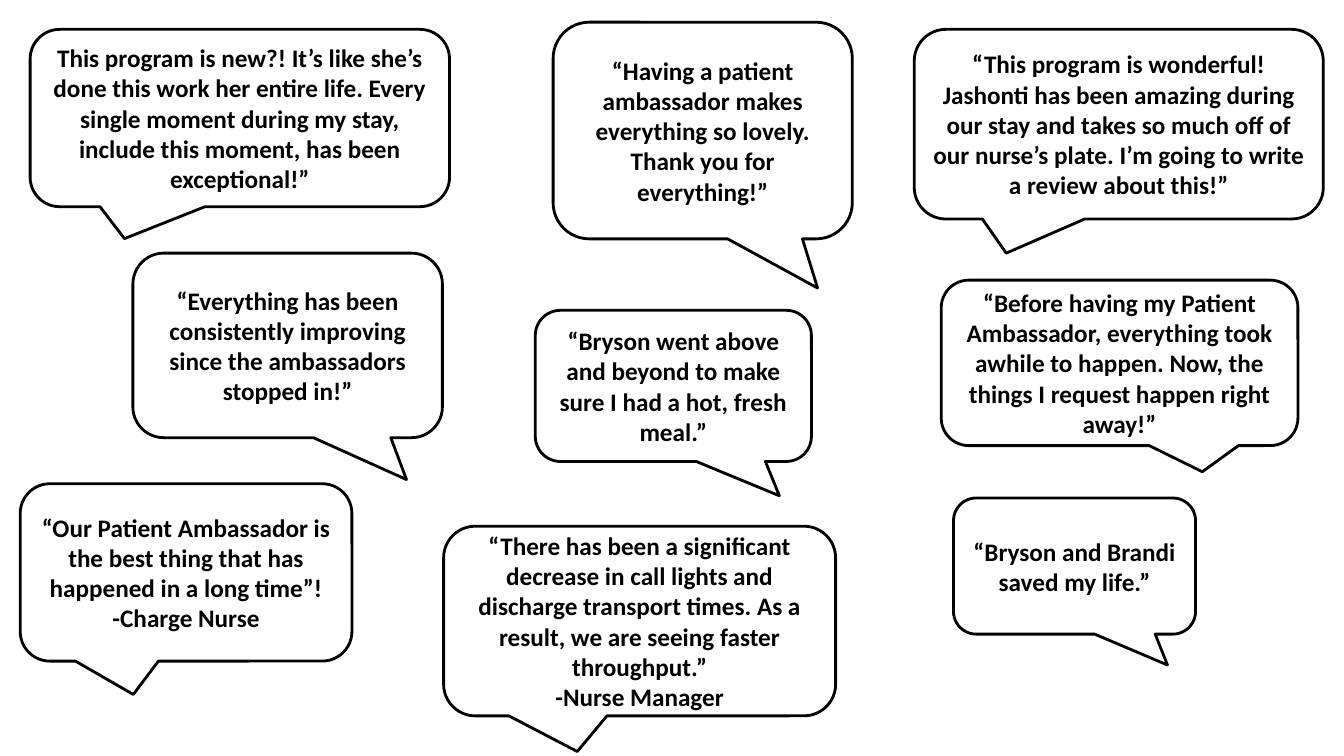
from dataclasses import dataclass

from pptx import Presentation
from pptx.dml.color import RGBColor
from pptx.enum.shapes import MSO_SHAPE as Shape
from pptx.enum.text import MSO_ANCHOR as Anchor, PP_ALIGN as Align
from pptx.slide import Slide
from pptx.util import Cm, Pt


@dataclass(frozen=True)
class Theme:
    ink: RGBColor = RGBColor(0, 0, 0)
    paper: RGBColor = RGBColor(255, 255, 255)
    font: str = "Calibri"
    quote_size: float = 18
    outline: float = 2


@dataclass(frozen=True)
class Tail:
    """Tip of the bubble's tail, as shares of its size from the centre."""
    x: float
    y: float


@dataclass(frozen=True)
class Bubble:
    """A quote and its place in centimetres."""
    left: float
    top: float
    width: float
    height: float
    tail: Tail
    quote: str
    speaker: str = ""


THEME = Theme()
CORNER = 0.167

FAR_LEFT = Tail(-0.275, 0.68)
LEFT = Tail(-0.159, 0.688)
RIGHT = Tail(0.232, 0.658)
FAR_RIGHT = Tail(0.384, 0.727)

BUBBLES = [
    # Left column
    Bubble(0.76, 0.74, 10.57, 4.47, FAR_LEFT,
           "This program is new?! It’s like she’s done this work her entire life. "
           "Every single moment during my stay, include this moment, has been "
           "exceptional!”"),
    Bubble(3.35, 6.38, 7.8, 4.65, FAR_RIGHT,
           "“Everything has been consistently improving since the ambassadors "
           "stopped in!”"),
    Bubble(0.51, 12.19, 8.36, 4.47, LEFT,
           "“Our Patient Ambassador is the best thing that has happened in a "
           "long time”!", "-Charge Nurse"),
    # Middle column
    Bubble(13.94, 0.56, 7.54, 5.46, FAR_RIGHT,
           "“Having a patient ambassador makes everything so lovely. Thank you "
           "for everything!”"),
    Bubble(13.49, 7.82, 6.96, 3.81, FAR_RIGHT,
           "“Bryson went above and beyond to make sure I had a hot, fresh meal.”"),
    Bubble(11.18, 13.26, 9.88, 4.78, LEFT,
           "“There has been a significant decrease in call lights and discharge "
           "transport times. As a result, we are seeing faster throughput.”",
           "-Nurse Manager"),
    # Right column
    Bubble(23.04, 0.74, 10.31, 4.78, FAR_LEFT,
           "“This program is wonderful! Jashonti has been amazing during our "
           "stay and takes so much off of our nurse’s plate. I’m going to write "
           "a review about this!”"),
    Bubble(23.72, 7.06, 8.99, 4.17, RIGHT,
           "“Before having my Patient Ambassador, everything took awhile to "
           "happen. Now, the things I request happen right away!”"),
    Bubble(24.03, 12.55, 6.1, 3.43, FAR_RIGHT,
           "“Bryson and Brandi saved my life.”"),
]


def add_bubble(s: Slide, bubble: Bubble) -> None:
    # Outline and tail
    sp = s.shapes.add_shape(
        Shape.ROUNDED_RECTANGULAR_CALLOUT, Cm(bubble.left), Cm(bubble.top),
        Cm(bubble.width), Cm(bubble.height))
    for i, value in enumerate((bubble.tail.x, bubble.tail.y, CORNER)):
        sp.adjustments[i] = value
    sp.shadow.inherit = False
    sp.fill.solid()
    sp.fill.fore_color.rgb = THEME.paper
    sp.line.color.rgb = THEME.ink
    sp.line.width = Pt(THEME.outline)

    # Quote, then its speaker if named
    tf = sp.text_frame
    tf.word_wrap = True
    tf.vertical_anchor = Anchor.MIDDLE
    lines = [bubble.quote, bubble.speaker] if bubble.speaker else [bubble.quote]
    for i, line in enumerate(lines):
        p = tf.add_paragraph() if i else tf.paragraphs[0]
        p.alignment = Align.CENTER
        r = p.add_run()
        r.text = line
        r.font.name = THEME.font
        r.font.size = Pt(THEME.quote_size)
        r.font.bold = True
        r.font.color.rgb = THEME.ink


def main() -> None:
    prs = Presentation()
    prs.slide_width, prs.slide_height = Cm(33.87), Cm(19.05)
    s = prs.slides.add_slide(prs.slide_layouts[6])
    for bubble in BUBBLES:
        add_bubble(s, bubble)
    prs.save("out.pptx")


if __name__ == "__main__":
    main()
